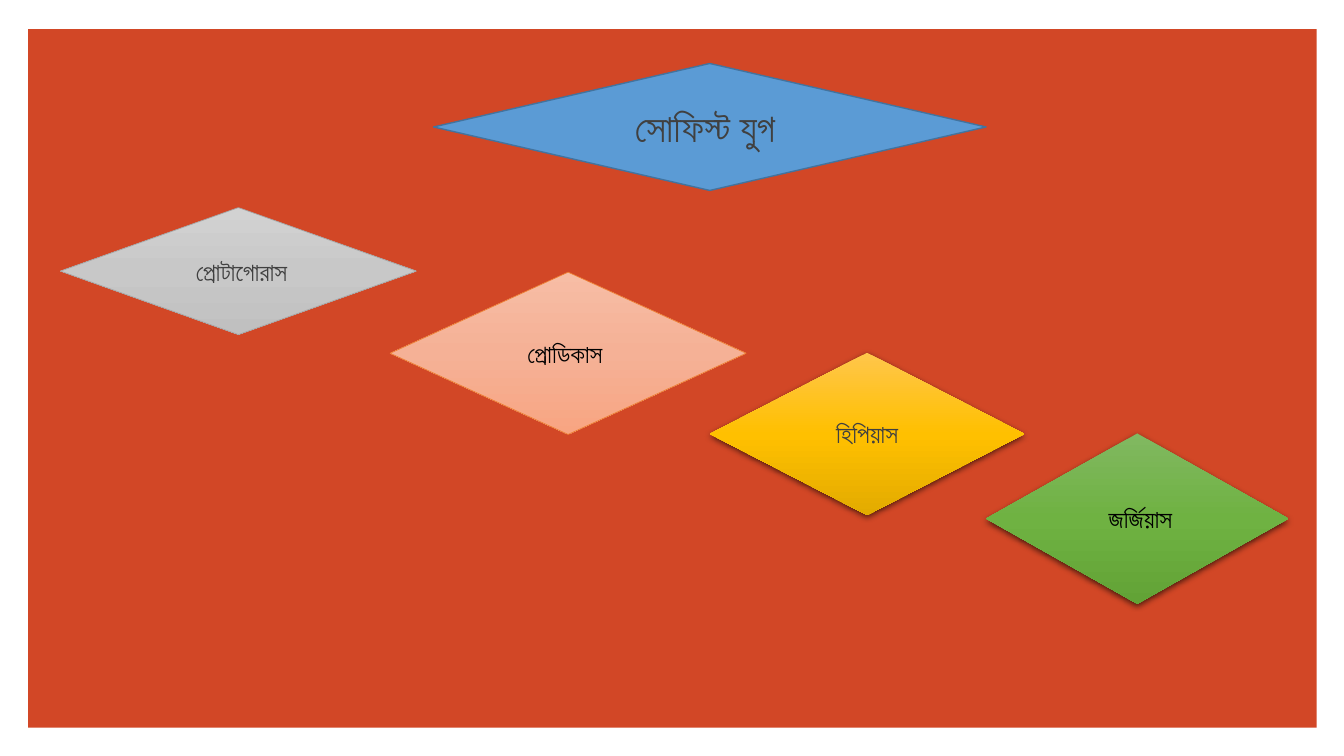
from lxml.etree import SubElement
from pptx import Presentation
from pptx.dml.color import RGBColor
from pptx.enum.shapes import MSO_SHAPE
from pptx.enum.text import MSO_ANCHOR, PP_ALIGN
from pptx.oxml.ns import qn
from pptx.util import Inches, Pt

PANEL = (0.28, 0.29, 12.78, 6.93)
TITLE = ("সোফিস্ট যুগ ", (4.3, 0.63, 5.48, 1.26))

# text, box, gradient stops, line, text colour; no line means a shadow
NAMES = [
    (" প্রোটাগোরাস", (0.6, 2.06, 3.53, 1.26),
     ("D2D2D2", "C8C8C8", "C0C0C0"), "A5A5A5", "404040"),
    ("প্রোডিকাস ", (3.87, 2.7, 3.53, 1.61),
     ("F7BDA5", "F5B196", "F8A582"), "ED7D31", "000000"),
    (" হিপিয়াস ", (7.04, 3.5, 3.12, 1.61),
     ("FFC64B", "FFC000", "E3AB00"), None, "404040"),
    (" জর্জিয়াস", (9.78, 4.3, 3, 1.69),
     ("81B861", "6FB242", "62A336"), None, "000000"),
]

# The letter yya as base plus dot, and as one code point
YYA_PAIR, YYA = chr(0x9AF) + chr(0x9BC), chr(0x9DF)


def paint(color, value):
    color.rgb = RGBColor.from_string(value)


def solid(fill, value):
    fill.solid()
    paint(fill.fore_color, value)


def outline(shape, value, width):
    solid(shape.line.fill, value)
    shape.line.width = Pt(width)


def write(shape, text, *, size, font, color):
    frame = shape.text_frame
    frame.word_wrap = True
    frame.vertical_anchor = MSO_ANCHOR.MIDDLE
    para = frame.paragraphs[0]
    para.alignment = PP_ALIGN.CENTER
    run = para.add_run()
    run.text = text.replace(YYA_PAIR, YYA)
    run.font.size = Pt(size)
    run.font.name = font
    paint(run.font.color, color)


def add(kind, box):
    shape = slide.shapes.add_shape(kind, *map(Inches, box))
    shape.shadow.inherit = False
    shape.line.fill.background()
    return shape


def blend(shape, stops):
    shape.fill.gradient()
    shape.fill.gradient_angle = 270
    group = shape._element.spPr.find(qn("a:gradFill")).find(qn("a:gsLst"))
    for old in list(group):
        group.remove(old)
    for i, value in enumerate(stops):
        stop = SubElement(group, qn("a:gs"), pos=str(i * 50000))
        SubElement(stop, qn("a:srgbClr"), val=value)


def shade(shape):
    effects = shape._element.spPr.find(qn("a:effectLst"))
    outer = SubElement(effects, qn("a:outerShdw"), blurRad=str(Pt(4.5)),
                       dist=str(Pt(1.5)), dir="5400000", algn="ctr",
                       rotWithShape="0")
    color = SubElement(outer, qn("a:srgbClr"), val="000000")
    SubElement(color, qn("a:alpha"), val="63000")


deck = Presentation()
deck.slide_width, deck.slide_height = Inches(13.33), Inches(7.5)
slide = deck.slides.add_slide(deck.slide_layouts[6])

# Red panel
panel = add(MSO_SHAPE.RECTANGLE, PANEL)
solid(panel.fill, "D24726")

# Title diamond; a placeholder would be drawn as a rectangle
text, box = TITLE
title = add(MSO_SHAPE.FLOWCHART_DECISION, box)
solid(title.fill, "5B9BD5")
outline(title, "43739E", 1)
write(title, text, size=28, font="Calibri", color="404040")

# Philosophers, stepping down to the right
for text, box, stops, edge, color in NAMES:
    shape = add(MSO_SHAPE.FLOWCHART_DECISION, box)
    blend(shape, stops)
    if edge:
        outline(shape, edge, 0.5)
    else:
        shade(shape)
    write(shape, text, size=18, font="Karla", color=color)

deck.save("out.pptx")
